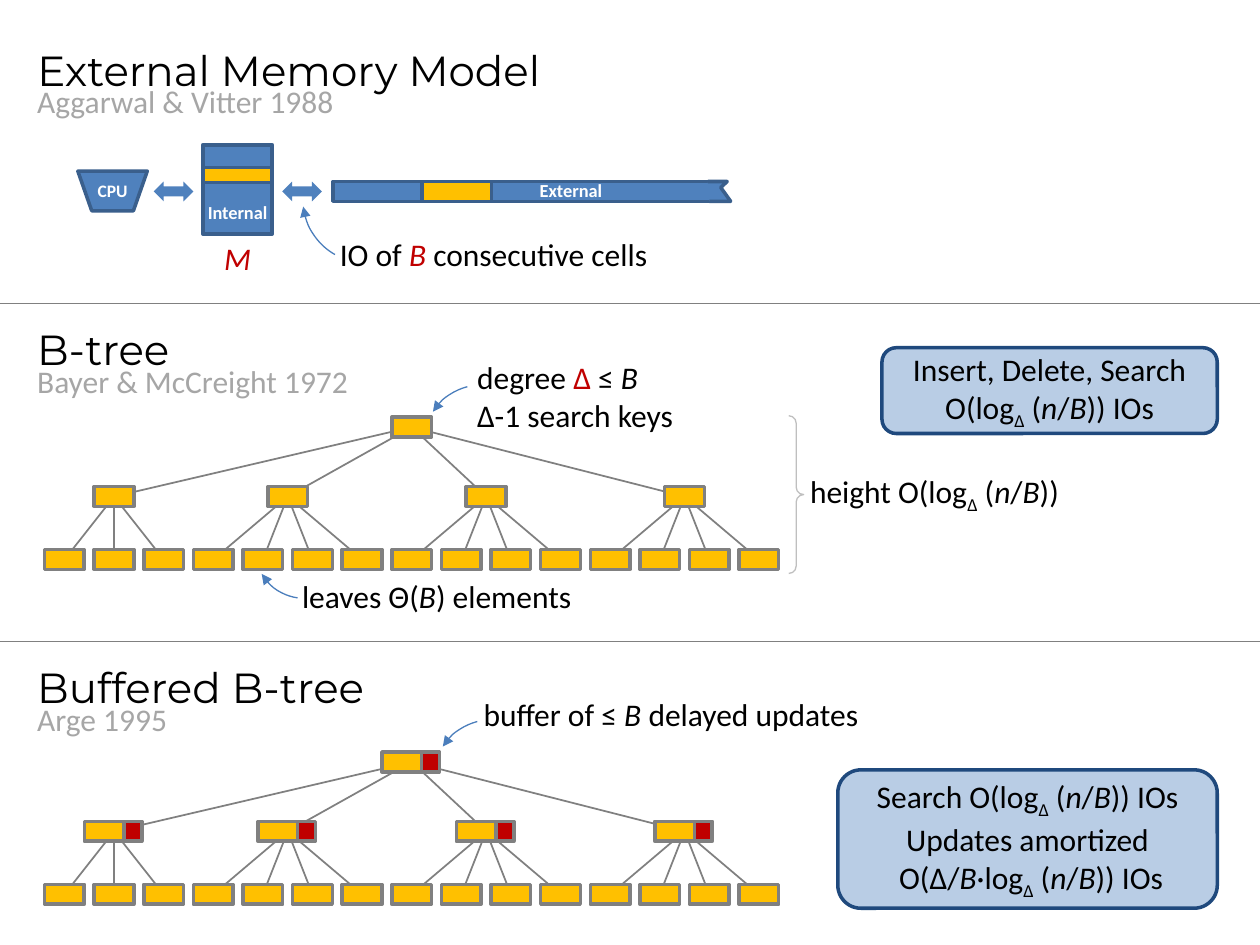
from dataclasses import dataclass

from lxml import etree
from pptx import Presentation
from pptx import util as u
from pptx.dml.color import RGBColor
from pptx.enum import shapes, text
from pptx.oxml.ns import qn


@dataclass(frozen=True)
class Theme:
    body: str = "Calibri"
    display: str = "Montserrat"
    title_pt: float = 24
    text_pt: float = 18
    label_pt: float = 10.5
    cpu_pt: float = 10
    black: str = "000000"
    white: str = "FFFFFF"
    muted: str = "A6A6A6"
    red: str = "C00000"
    blue: str = "4F81BD"
    blue_edge: str = "3A5F8C"
    pointer: str = "4B7EBC"
    yellow: str = "FFC000"
    gray: str = "808080"
    brace: str = "BFBFBF"
    result: str = "B9CDE5"
    result_edge: str = "1F497D"


T = Theme()
SHAPE = shapes.MSO_SHAPE
LEFT, CENTER = text.PP_ALIGN.LEFT, text.PP_ALIGN.CENTER
TOP, MIDDLE = text.MSO_ANCHOR.TOP, text.MSO_ANCHOR.MIDDLE
ITALIC, SUB, RED, BREAK = "*", "_", "^", "|"

BOX_W, BOX_H, BUFFER_W = 0.8, 0.4, 0.36
LEAF_LEFT, LEAF_PITCH = 0.9, 1.0
LEAF_GROUPS = (3, 4, 4, 4)
NODE_DROP, LEAF_DROP = 1.4, 2.67


def cm(*values):
    return [u.Cm(v) for v in values]


def rgb(value):
    return RGBColor.from_string(value)


def add_runs(p, line, size, color, font, bold):
    on = {ITALIC: False, SUB: False, RED: False}
    chunk = ""
    for ch in line + BREAK:
        if ch not in on and ch != BREAK:
            chunk += ch
            continue
        if chunk:
            r = p.add_run()
            r.text = chunk
            f = r.font
            f.name, f.size, f.bold, f.italic = font, u.Pt(size), bold, on[ITALIC]
            f.color.rgb = rgb(T.red if on[RED] else color)
            if on[SUB]:
                r._r.get_or_add_rPr().set("baseline", "-25000")
            chunk = ""
        if ch in on:
            on[ch] = not on[ch]


def write(sp, lines, size=T.text_pt, color=T.black, font=T.body, bold=False,
          align=LEFT, anchor=TOP):
    tf = sp.text_frame
    tf.word_wrap = True
    tf.auto_size = text.MSO_AUTO_SIZE.NONE
    tf.vertical_anchor = anchor
    for i, line in enumerate(lines.split("\n")):
        p = tf.paragraphs[0] if i == 0 else tf.add_paragraph()
        p.alignment = align
        for j, part in enumerate(line.split(BREAK)):
            if j:
                p.add_line_break()
            add_runs(p, part, size, color, font, bold)


def add_label(s, box, lines, **fmt):
    write(s.shapes.add_textbox(*cm(*box)), lines, **fmt)


def style(sp, fill=None, line=None, width=2):
    sp.shadow.inherit = False
    if fill:
        sp.fill.solid()
        sp.fill.fore_color.rgb = rgb(fill)
    else:
        sp.fill.background()
    if line:
        sp.line.color.rgb = rgb(line)
        sp.line.width = u.Pt(width)
    else:
        sp.line.fill.background()
    return sp


def add_box(parent, kind, box, fill=None, line=None, width=2):
    return style(parent.shapes.add_shape(kind, *cm(*box)), fill, line, width)


def add_line(parent, start, end, width):
    c = parent.shapes.add_connector(shapes.MSO_CONNECTOR.STRAIGHT, *cm(*start, *end))
    c.line.color.rgb = rgb(T.gray)
    c.line.width = u.Pt(width)
    etree.SubElement(c._element.spPr, qn("a:effectLst"))
    return c


def add_pointer(s, box, rotation, start, end, flip=False):
    sp = add_box(s, SHAPE.ARC, box, line=T.pointer, width=0.75)
    sp.adjustments[0], sp.adjustments[1] = start, end
    sp.rotation = rotation
    if flip:
        sp._element.spPr.find(qn("a:xfrm")).set("flipV", "1")
    etree.SubElement(sp.line._get_or_add_ln(), qn("a:tailEnd"), type="triangle")


def add_result(s, box, lines):
    sp = add_box(s, SHAPE.ROUNDED_RECTANGLE, box, T.result, T.result_edge)
    write(sp, lines, align=CENTER, anchor=MIDDLE)


def add_heading(s, top, title, authors, sp=None):
    box = cm(0.5, top, 23.62, 1.55)
    sp = sp or s.shapes.add_textbox(*box)
    sp.left, sp.top, sp.width, sp.height = box
    write(sp, title, size=T.title_pt, font=T.display)
    add_label(s, (0.5, top + 0.77, 7.4, 1.02), authors, color=T.muted)


def add_node(group, hub, top, buffered=False):
    left = hub - BOX_W / 2 - (0.2 if buffered else 0)
    sp = add_box(group, SHAPE.RECTANGLE, (left, top, BOX_W, BOX_H), T.yellow, T.gray)
    if buffered:
        add_box(group, SHAPE.RECTANGLE, (left + BOX_W, top, BUFFER_W, BOX_H), T.red, T.gray)
    return sp


def add_edge(group, child, parent):
    edge = add_line(group, child, parent, 1)
    group._element.remove(edge._element)
    group._element.insert(2, edge._element)
    return edge


def add_tree(s, top, buffered=False):
    group = s.shapes.add_group_shape()
    mid = BOX_H / 2
    node_top, leaf_top = top + NODE_DROP, top + LEAF_DROP
    first = LEAF_LEFT + BOX_W / 2
    root = first + LEAF_PITCH * (sum(LEAF_GROUPS) - 1) / 2
    add_node(group, root, top, buffered)
    start = 0
    for count in LEAF_GROUPS:
        hub = first + LEAF_PITCH * (start + (count - 1) / 2)
        node = add_node(group, hub, node_top, buffered)
        add_edge(group, (hub, node_top + mid), (root, top + mid))
        for i in range(start, start + count):
            x = first + LEAF_PITCH * i
            leaf = add_node(group, x, leaf_top)
            if abs(x - hub) > 0.01:
                add_edge(group, (x, leaf_top + mid), (hub, node_top + mid))
                continue
            edge = add_edge(group, (x, leaf_top), (hub, node_top + BOX_H))
            edge.begin_connect(leaf, 0)
            if not buffered:
                edge.end_connect(node, 2)
        start += count


def add_memory_model(s):
    cpu = add_box(s, SHAPE.FLOWCHART_MANUAL_OPERATION, (1.57, 3.45, 1.4, 0.8), T.blue, T.blue_edge)
    cpu.text_frame.margin_left = cpu.text_frame.margin_right = 0
    write(cpu, "CPU", size=T.cpu_pt, color=T.white, bold=True, align=CENTER, anchor=MIDDLE)
    for box, fill in (((4.09, 2.92, 1.4, 1.8), T.blue), ((4.09, 3.38, 1.4, 0.3), T.yellow),
                      ((6.71, 3.66, 7.8, 0.4), T.blue), ((8.51, 3.66, 1.4, 0.4), T.yellow)):
        add_box(s, SHAPE.RECTANGLE, box, fill, T.blue_edge)
    for left in (3.1, 5.69):
        add_box(s, SHAPE.LEFT_RIGHT_ARROW, (left, 3.66, 0.8, 0.4), T.blue)
    for box, name in (((3.89, 3.94, 1.8, 0.71), "Internal"), ((9.91, 3.48, 3.2, 0.71), "External")):
        add_label(s, box, name, size=T.label_pt, color=T.white, bold=True, align=CENTER)
    add_box(s, SHAPE.RECTANGLE, (14.38, 3.53, 0.5, 0.64), T.white)
    torn = [cm(*pt) for pt in ((14.27, 3.66), (14.66, 3.66), (14.53, 3.78), (14.73, 4.06), (14.3, 4.06))]
    fb = s.shapes.build_freeform(*torn[0])
    fb.add_line_segments(torn[1:], close=False)
    style(fb.convert_to_shape(), T.blue, T.blue_edge)
    add_label(s, (4.09, 4.7, 1.4, 1.02), "*M*", color=T.red, align=CENTER)
    add_pointer(s, (6.1, 2.74, 2.39, 2.54), 172.6, 182.01, 0)
    add_label(s, (6.6, 4.62, 8.2, 1.02), "IO of ^*B *^consecutive cells")


def main():
    prs = Presentation()
    prs.slide_width, prs.slide_height = cm(25.4, 19.05)
    s = prs.slides.add_slide(prs.slide_layouts[5])

    add_heading(s, 0.76, "External Memory Model", "Aggarwal & Vitter 1988", s.shapes.title)
    add_memory_model(s)

    add_heading(s, 6.4, "B-tree", "Bayer & McCreight 1972")
    add_tree(s, 8.41)
    add_pointer(s, (8.61, 7.75, 2.21, 1.83), 172.6, 168.75, 199.36, flip=True)
    add_label(s, (9.37, 7.09, 8.2, 1.8), "degree ^Δ ^≤ *B*|Δ-1 search keys")
    add_pointer(s, (5.13, 10.03, 2.01, 2.03), 176.5, 168.75, 199.36)
    add_label(s, (5.84, 11.51, 8.2, 1.02), "leaves Θ(*B*) elements")
    brace = add_box(s, SHAPE.LEFT_BRACE, (15.9, 8.38, 0.3, 3.18), line=T.brace, width=0.75)
    brace.adjustments[0] = 0.5
    brace.rotation = 180
    add_label(s, (16.08, 9.4, 6.05, 1.02), "height O(log_Δ_ (*n*/*B*))")
    add_result(s, (17.78, 7.01, 6.76, 1.73), "Insert, Delete, Search\nO(log_Δ_ (*n*/*B*)) IOs")

    add_heading(s, 13.21, "Buffered B-tree", "Arge 1995")
    add_tree(s, 15.16, buffered=True)
    add_pointer(s, (8.81, 14.5, 2.21, 1.83), 172.6, 168.75, 199.36, flip=True)
    add_label(s, (9.5, 13.89, 8.2, 1.02), "buffer of ≤ *B *delayed updates")
    add_result(s, (16.89, 15.52, 7.65, 2.79),
               "Search O(log_Δ_ (*n*/*B*)) IOs\nUpdates amortized| O(Δ/*B*·log_Δ_ (*n*/*B*)) IOs")

    for y in (6.12, 12.93):
        add_line(s, (0, y), (25.4, y), 0.75)
    prs.save("out.pptx")


if __name__ == "__main__":
    main()
